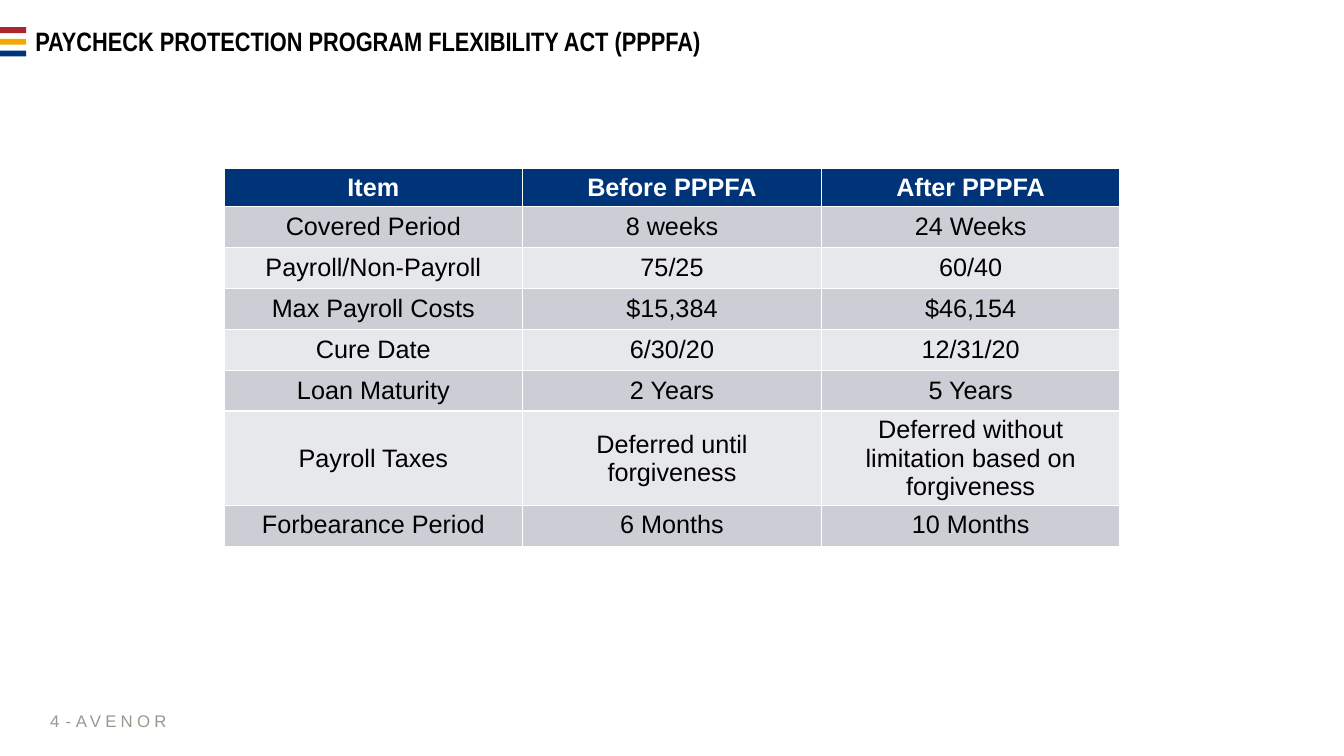
from pptx import Presentation
from pptx.dml.color import RGBColor
from pptx.enum.shapes import MSO_SHAPE
from pptx.enum.text import MSO_ANCHOR, MSO_AUTO_SIZE, PP_ALIGN
from pptx.util import Inches, Pt

RECTANGLE = MSO_SHAPE.RECTANGLE
TOP, MIDDLE = MSO_ANCHOR.TOP, MSO_ANCHOR.MIDDLE
LEFT, CENTER, RIGHT = PP_ALIGN.LEFT, PP_ALIGN.CENTER, PP_ALIGN.RIGHT
NO_AUTOFIT = MSO_AUTO_SIZE.NONE

BLACK = RGBColor(0x00, 0x00, 0x00)
WHITE = RGBColor(0xFF, 0xFF, 0xFF)
RED = RGBColor(0xAA, 0x27, 0x2F)
YELLOW = RGBColor(0xF0, 0xAB, 0x00)
NAVY = RGBColor(0x00, 0x34, 0x78)
DARK_BAND = RGBColor(0xCC, 0xCE, 0xD6)
LIGHT_BAND = RGBColor(0xE7, 0xE8, 0xEC)
FOOTER_GREY = RGBColor(0x9D, 0x96, 0x8D)

SLIDE_WIDTH, SLIDE_HEIGHT = 13.33, 7.5
TITLE = "PAYCHECK PROTECTION PROGRAM FLEXIBILITY ACT (PPPFA)"
COMPARISON = [
    ("Item", "Before PPPFA", "After PPPFA"),
    ("Covered Period", "8 weeks", "24 Weeks"),
    ("Payroll/Non-Payroll", "75/25", "60/40"),
    ("Max Payroll Costs", "$15,384", "$46,154"),
    ("Cure Date", "6/30/20", "12/31/20"),
    ("Loan Maturity", "2 Years", "5 Years"),
    ("Payroll Taxes", "Deferred until forgiveness",
     "Deferred without limitation based on forgiveness"),
    ("Forbearance Period", "6 Months", "10 Months"),
]
# Row heights in points
HEADER_HEIGHT, ROW_HEIGHT, TAXES_HEIGHT = 27.4, 29.2, 67.7


def add_text(paragraph, text, size=18, color=BLACK, bold=False, font="Arial",
             align=LEFT, spacing=0):
    """Append a run to the paragraph; spacing is in points between letters."""
    paragraph.alignment = align
    run = paragraph.add_run()
    run.text = text
    run.font.name = font
    run.font.size = Pt(size)
    run.font.bold = bold
    run.font.color.rgb = color
    if spacing:
        run.font._element.set("spc", str(spacing * 100))


def add_stripes(slide, left, top, width, height):
    """Three bars with gaps as tall as the bars."""
    bar = height / 5
    for index, color in enumerate((RED, YELLOW, NAVY)):
        stripe = slide.shapes.add_shape(
            RECTANGLE, Inches(left), Inches(top + 2 * index * bar),
            Inches(width), Inches(bar))
        stripe.shadow.inherit = False
        stripe.fill.solid()
        stripe.fill.fore_color.rgb = color
        stripe.line.fill.background()


def place_title(slide, left, top, width, height):
    title = slide.shapes.title
    title.left, title.top = Inches(left), Inches(top)
    title.width, title.height = Inches(width), Inches(height)
    frame = title.text_frame
    frame.vertical_anchor = MIDDLE
    frame.auto_size = NO_AUTOFIT
    frame.word_wrap = True
    paragraph = frame.paragraphs[0]
    paragraph.line_spacing = 0.9
    add_text(paragraph, TITLE, size=19, bold=True, font="Arial Narrow")


def add_comparison(slide, left, top, width, height):
    table = slide.shapes.add_table(
        len(COMPARISON), len(COMPARISON[0]), Inches(left), Inches(top),
        Inches(width), Inches(height)).table
    last = len(COMPARISON) - 1
    for row_index, texts in enumerate(COMPARISON):
        header = row_index == 0
        row_height = HEADER_HEIGHT if header else ROW_HEIGHT
        if texts[0] == "Payroll Taxes":
            row_height = TAXES_HEIGHT
        table.rows[row_index].height = Pt(row_height)
        band = DARK_BAND if row_index % 2 else LIGHT_BAND
        for column_index, text in enumerate(texts):
            cell = table.cell(row_index, column_index)
            cell.fill.solid()
            cell.fill.fore_color.rgb = NAVY if header else band
            cell.vertical_anchor = TOP if row_index == last else MIDDLE
            add_text(cell.text_frame.paragraphs[0], text, bold=header,
                     color=WHITE if header else BLACK, align=CENTER)


def add_footer_part(slide, left, top, width, height):
    """Add a one-line box without side margins and return its paragraph."""
    box = slide.shapes.add_textbox(
        Inches(left), Inches(top), Inches(width), Inches(height))
    frame = box.text_frame
    frame.word_wrap = True
    frame.vertical_anchor = MIDDLE
    frame.margin_left = frame.margin_right = 0
    return frame.paragraphs[0]


def add_footer(slide, left, top, width, height):
    """Page number, right-aligned in the first fifth, then the firm name."""
    number_width, gap = width / 5, 0.06
    firm_left = left + number_width + gap
    style = {"size": 12, "color": FOOTER_GREY}
    number = add_footer_part(slide, left, top, number_width, height)
    add_text(number, "4", align=RIGHT, **style)
    firm = add_footer_part(slide, firm_left, top,
                           width - number_width - gap, height)
    add_text(firm, "- ", **style)
    add_text(firm, "AVENOR", spacing=3, **style)


def main():
    presentation = Presentation()
    presentation.slide_width = Inches(SLIDE_WIDTH)
    presentation.slide_height = Inches(SLIDE_HEIGHT)
    slide = presentation.slides.add_slide(presentation.slide_layouts[5])
    add_stripes(slide, 0, 0.27, 0.26, 0.29)
    place_title(slide, 0.25, 0.23, 12.84, 0.39)
    table_width = SLIDE_WIDTH * 2 / 3
    add_comparison(slide, (SLIDE_WIDTH - table_width) / 2, 1.67,
                   table_width, 3.75)
    add_footer(slide, 0.22, 6.95, 1.85, 0.4)
    presentation.save("out.pptx")


if __name__ == "__main__":
    main()
